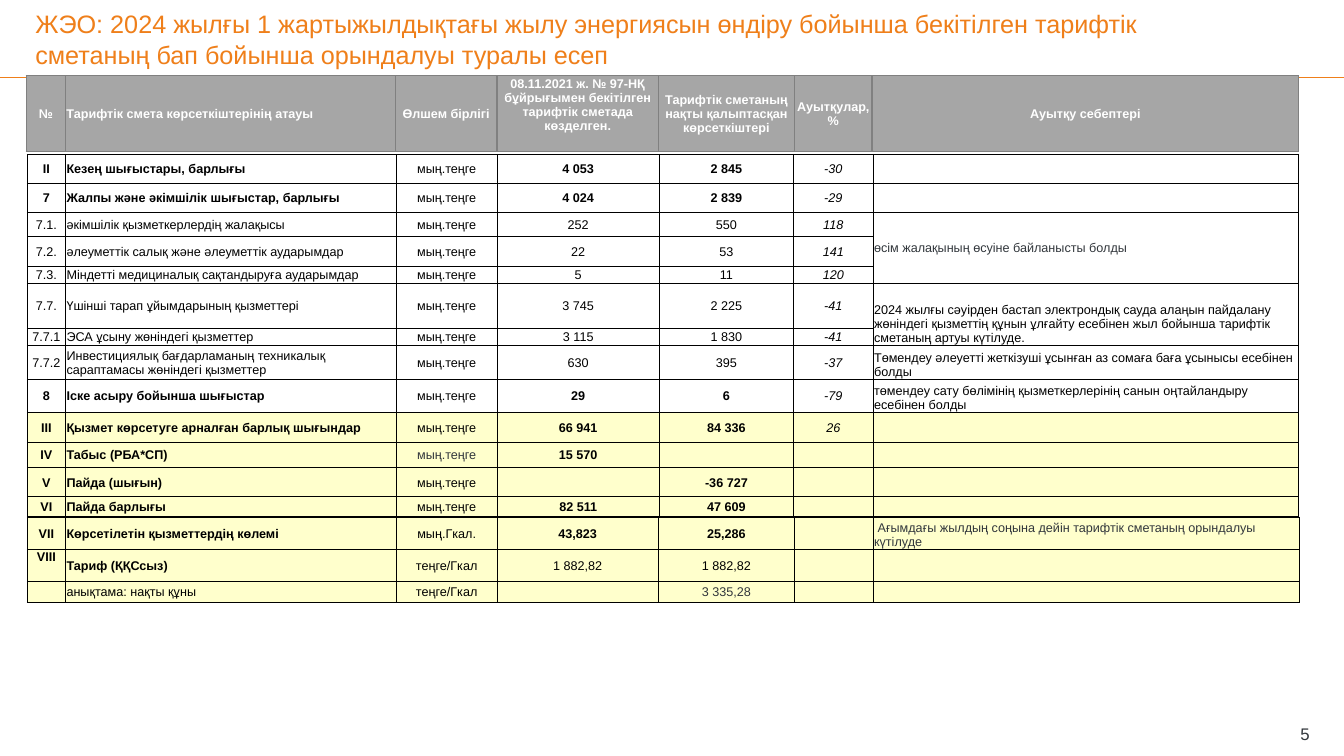
from dataclasses import dataclass
from typing import Optional

from lxml.etree import SubElement
from pptx import Presentation
from pptx.dml.color import RGBColor as Rgb
from pptx.enum.shapes import MSO_CONNECTOR as Connector
from pptx.enum.text import MSO_ANCHOR as Anchor, MSO_AUTO_SIZE as AutoSize, PP_ALIGN as Align
from pptx.oxml import parse_xml
from pptx.oxml.ns import nsdecls, qn
from pptx.util import Emu, Pt


@dataclass(frozen=True)
class Theme:
    font: str = "Arial"
    accent: str = "EF7F1A"
    ink: str = "000000"
    muted: str = "32373C"
    header_ink: str = "FFFFFF"
    header_fill: str = "A6A6A6"
    header_border: str = "808080"
    summary_fill: str = "FFFFCC"
    title_size: int = 18
    page_size: int = 12
    table_size: int = 9


@dataclass(frozen=True)
class Row:
    height: int
    texts: tuple[str, ...]
    bold: tuple[int, ...] = ()
    muted: tuple[int, ...] = ()
    top: tuple[int, ...] = ()
    fill: Optional[str] = None
    reason_rows: int = 1
    reason_anchor: Anchor = Anchor.BOTTOM


@dataclass(frozen=True)
class Grid:
    left: int
    top: int
    columns: tuple[int, ...]
    rows: tuple[Row, ...]
    border: str
    border_width: float
    ink: str
    reason_align: Align = Align.LEFT


THEME = Theme()
PX = 9144
NAME, DEVIATION, REASON = 1, 5, 6
LABELS = (0, 1)
TOTALS = (0, 1, 3, 4)
YELLOW = THEME.summary_fill
THOUSAND = "мың.теңге"
PER_GCAL = "теңге/Гкал"

HEADER = Grid(26, 75, (39, 327, 101, 160, 135, 77, 423), (
    Row(75, ("№", "Тарифтік смета көрсеткіштерінің атауы", "Өлшем бірлігі",
             "08.11.2021 ж. № 97-НҚ бұйрығымен бекітілген тарифтік сметада көзделген.",
             "Тарифтік сметаның нақты қалыптасқан көрсеткіштері", "Ауытқулар, %",
             "Ауытқу себептері"),
        bold=tuple(range(7)), top=(3,), fill=THEME.header_fill, reason_anchor=Anchor.MIDDLE),
), THEME.header_border, 1, THEME.header_ink, Align.CENTER)

EXPENSES = Grid(27, 153, (38, 328, 100, 161, 133, 79, 422), (
    Row(29, ("II", "Кезең шығыстары, барлығы", THOUSAND, "4 053", "2 845", "-30", ""), TOTALS),
    Row(29, ("7", "Жалпы және әкімшілік шығыстар, барлығы", THOUSAND,
             "4 024", "2 839", "-29", ""), TOTALS),
    Row(24, ("7.1.", "әкімшілік қызметкерлердің жалақысы", THOUSAND, "252", "550", "118",
             "өсім жалақының өсуіне байланысты болды"),
        muted=(REASON,), reason_rows=3, reason_anchor=Anchor.MIDDLE),
    Row(29, ("7.2.", "әлеуметтік салық және әлеуметтік аударымдар", THOUSAND,
             "22", "53", "141", "")),
    Row(17, ("7.3.", "Міндетті медициналық сақтандыруға аударымдар", THOUSAND,
             "5", "11", "120", "")),
    Row(45, ("7.7.", "Үшінші тарап ұйымдарының қызметтері", THOUSAND, "3 745", "2 225", "-41",
             "2024 жылғы сәуірден бастап электрондық сауда алаңын пайдалану жөніндегі қызметтің "
             "құнын ұлғайту есебінен жыл бойынша тарифтік сметаның артуы күтілуде."),
        reason_rows=2),
    Row(17, ("7.7.1", "ЭСА ұсыну жөніндегі қызметтер", THOUSAND, "3 115", "1 830", "-41", "")),
    Row(33, ("7.7.2", "Инвестициялық бағдарламаның техникалық сараптамасы жөніндегі қызметтер",
             THOUSAND, "630", "395", "-37",
             "Төмендеу әлеуетті жеткізуші ұсынған аз сомаға баға ұсынысы есебінен болды")),
    Row(33, ("8", "Іске асыру бойынша шығыстар", THOUSAND, "29", "6", "-79",
             "төмендеу сату бөлімінің қызметкерлерінің санын оңтайландыру есебінен болды"), TOTALS),
    Row(30, ("III", "Қызмет көрсетуге арналған барлық шығындар", THOUSAND,
             "66 941", "84 336", "26", ""), TOTALS, fill=YELLOW),
    Row(25, ("IV", "Табыс (РБА*СП)", THOUSAND, "15 570", "", "", ""), TOTALS, (2,), fill=YELLOW),
    Row(29, ("V", "Пайда (шығын)", THOUSAND, "", "-36 727", "", ""), TOTALS, fill=YELLOW),
    Row(19, ("VI", "Пайда барлығы", THOUSAND, "82 511", "47 609", "", ""), TOTALS, fill=YELLOW),
), THEME.ink, 0.5, THEME.ink)

TARIFF = Grid(27, 513, (38, 328, 100, 160, 135, 78, 423), (
    Row(32, ("VII", "Көрсетілетін қызметтердің көлемі", "мың.Гкал.", "43,823", "25,286", "",
             " Ағымдағы жылдың соңына дейін тарифтік сметаның орындалуы күтілуде"),
        TOTALS, (REASON,), fill=YELLOW),
    Row(32, ("VIII", "Тариф (ҚҚСсыз)", PER_GCAL, "1 882,82", "1 882,82", "", ""),
        LABELS, top=(0,), fill=YELLOW),
    Row(21, ("", "анықтама: нақты құны", PER_GCAL, "", "3 335,28", "", ""),
        muted=(4,), fill=YELLOW),
), THEME.ink, 0.5, THEME.ink)


def px(length: int) -> Emu:
    return Emu(length * PX)


def write(paragraph, text: str, size: int, color: str, align: Align,
          bold: bool = False, italic: bool = False) -> None:
    paragraph.alignment = align
    run = paragraph.add_run()
    run.text = text
    font = run.font
    font.name, font.size, font.bold, font.italic = THEME.font, Pt(size), bold, italic
    font.color.rgb = Rgb.from_string(color)


def prepare(frame) -> None:
    frame.word_wrap = True
    frame.auto_size = AutoSize.NONE
    frame.vertical_anchor = Anchor.MIDDLE
    frame.margin_left = frame.margin_right = frame.margin_top = frame.margin_bottom = 0


def outline(cell, color: str, width: float) -> None:
    properties = cell._tc.get_or_add_tcPr()
    for position, side in enumerate("LRTB"):
        properties.insert(position, parse_xml(
            f'<a:ln{side} {nsdecls("a")} w="{Pt(width)}"><a:solidFill>'
            f'<a:srgbClr val="{color}"/></a:solidFill></a:ln{side}>'))


def fill_cell(cell, grid: Grid, row: Row, column: int) -> None:
    cell.margin_left = cell.margin_right = cell.margin_top = px(1)
    cell.margin_bottom = 0
    cell.vertical_anchor = Anchor.TOP if column in row.top else Anchor.MIDDLE
    if column == REASON:
        cell.vertical_anchor = row.reason_anchor
    if row.fill:
        cell.fill.solid()
        cell.fill.fore_color.rgb = Rgb.from_string(row.fill)
    else:
        cell.fill.background()
    outline(cell, grid.border, grid.border_width)
    paragraph = cell.text_frame.paragraphs[0]
    if not row.texts[column]:
        SubElement(paragraph._p, qn("a:endParaRPr"), sz=str(THEME.table_size * 100))
        return
    align = {NAME: Align.LEFT, REASON: grid.reason_align}.get(column, Align.CENTER)
    write(paragraph, row.texts[column], THEME.table_size,
          THEME.muted if column in row.muted else grid.ink, align,
          column in row.bold, column == DEVIATION and grid is not HEADER)


def draw_grid(slide, grid: Grid) -> None:
    table = slide.shapes.add_table(
        len(grid.rows), len(grid.columns), px(grid.left), px(grid.top),
        px(sum(grid.columns)), px(sum(row.height for row in grid.rows))).table
    table.first_row = table.horz_banding = False
    for column, width in enumerate(grid.columns):
        table.columns[column].width = px(width)
    for index, row in enumerate(grid.rows):
        table.rows[index].height = px(row.height)
        for column in range(len(grid.columns)):
            fill_cell(table.cell(index, column), grid, row, column)
        if row.reason_rows > 1:
            table.cell(index, REASON).merge(table.cell(index + row.reason_rows - 1, REASON))


def draw_frame(slide) -> None:
    rule = slide.shapes.add_connector(Connector.STRAIGHT, 0, px(77), px(1333), px(77))
    rule.line.color.rgb = Rgb.from_string(THEME.accent)
    rule.line.width = Pt(0.75)
    SubElement(rule._element.spPr, qn("a:effectLst"))

    heading = slide.shapes.title
    heading.left, heading.top, heading.width, heading.height = px(35), 0, px(1157), px(77)
    prepare(heading.text_frame)
    write(heading.text_frame.paragraphs[0],
          "ЖЭО: 2024 жылғы 1 жартыжылдықтағы жылу энергиясын өндіру бойынша бекітілген "
          "тарифтік сметаның бап бойынша орындалуы туралы есеп",
          THEME.title_size, THEME.accent, Align.LEFT)

    page = slide.shapes.add_textbox(px(1249), px(715), px(50), px(25)).text_frame
    prepare(page)
    write(page.paragraphs[0], "5", THEME.page_size, THEME.muted, Align.RIGHT)


def main() -> None:
    deck = Presentation()
    deck.slide_width, deck.slide_height = px(1333), px(750)
    slide = deck.slides.add_slide(deck.slide_layouts[5])
    draw_frame(slide)
    for grid in (EXPENSES, HEADER, TARIFF):
        draw_grid(slide, grid)
    deck.save("out.pptx")


if __name__ == "__main__":
    main()
